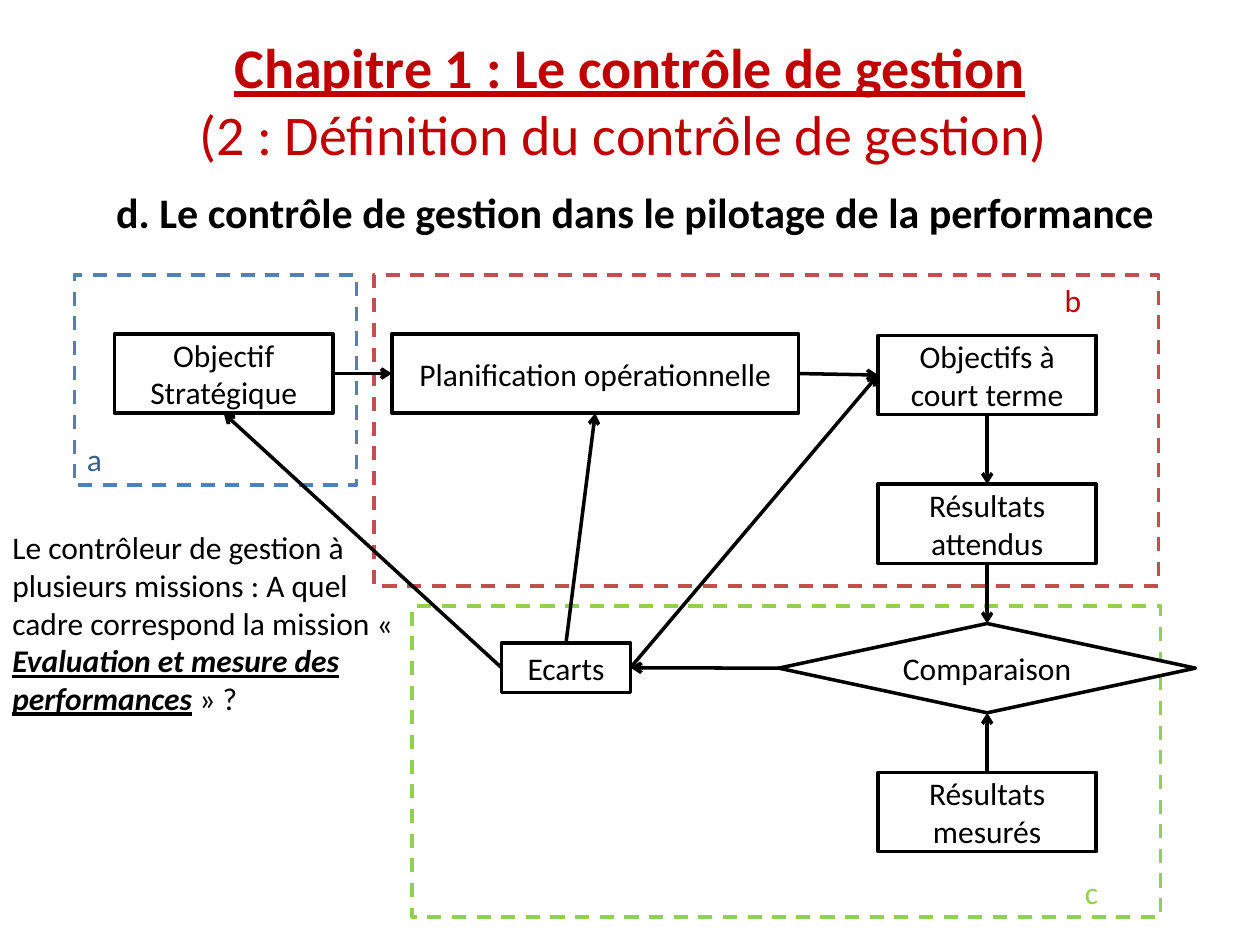
import pptx
import pptx.util
import pptx.dml.color
import pptx.enum.dml
import pptx.enum.shapes
import pptx.enum.text
import pptx.oxml
import pptx.oxml.ns

Cm, Pt = pptx.util.Cm, pptx.util.Pt
RGBColor = pptx.dml.color.RGBColor
SHAPE = pptx.enum.shapes.MSO_SHAPE
ALIGN = pptx.enum.text.PP_ALIGN
ANCHOR = pptx.enum.text.MSO_ANCHOR

BLACK = RGBColor(0x00, 0x00, 0x00)
WHITE = RGBColor(0xFF, 0xFF, 0xFF)
DARK_RED = RGBColor(0xC0, 0x00, 0x00)
FRAME_RED = RGBColor(0xC0, 0x50, 0x4D)
FRAME_BLUE = RGBColor(0x4F, 0x81, 0xBD)
DARK_BLUE = RGBColor(0x37, 0x60, 0x92)
GREEN = RGBColor(0x92, 0xD0, 0x50)

TOP, LEFT, BOTTOM, RIGHT = range(4)  # connection sites

prs = pptx.Presentation()
prs.slide_width, prs.slide_height = Cm(25.4), Cm(19.05)
slide = prs.slides.add_slide(prs.slide_layouts[6])


def add_box(kind, place, line_color):
    """Add a white preset shape; place is left, top, width, height in cm."""
    box = slide.shapes.add_shape(kind, *map(Cm, place))
    box.shadow.inherit = False
    box.fill.solid()
    box.fill.fore_color.rgb = WHITE
    if line_color is None:
        box.line.fill.background()
    else:
        box.line.color.rgb = line_color
        box.line.width = Pt(2)
    return box


def write(shape, paragraphs, size, color, align, anchor=ANCHOR.TOP):
    """Fill a shape; each paragraph is a list of (text, styles), styles from "biu"."""
    frame = shape.text_frame
    frame.word_wrap = True
    frame.vertical_anchor = anchor
    for index, pieces in enumerate(paragraphs):
        paragraph = frame.add_paragraph() if index else frame.paragraphs[0]
        paragraph.alignment = align
        for text, styles in pieces:
            run = paragraph.add_run()
            run.text = text
            run.font.name = "Calibri"
            run.font.size = Pt(size)
            run.font.color.rgb = color
            run.font.bold = "b" in styles
            run.font.italic = "i" in styles
            run.font.underline = "u" in styles


# Dashed frames
for place, color in [
    ((8.31, 12.22, 15.09, 6.27), GREEN),
    ((7.54, 5.54, 15.82, 6.27), FRAME_RED),
    ((1.5, 5.54, 5.69, 4.24), FRAME_BLUE),
]:
    frame_box = add_box(SHAPE.RECTANGLE, place, color)
    frame_box.line.dash_style = pptx.enum.dml.MSO_LINE.DASH

# Steps of the control loop
steps = {}
for label, kind, place in [
    ("Objectif Stratégique", SHAPE.RECTANGLE, (2.31, 6.73, 4.4, 1.6)),
    ("Planification opérationnelle", SHAPE.RECTANGLE, (7.9, 6.73, 8.2, 1.6)),
    ("Objectifs à court terme", SHAPE.RECTANGLE, (17.7, 6.76, 4.4, 1.6)),
    ("Résultats attendus", SHAPE.RECTANGLE, (17.7, 9.76, 4.4, 1.6)),
    ("Comparaison", SHAPE.FLOWCHART_DECISION, (15.7, 12.57, 8.4, 1.8)),
    ("Résultats mesurés", SHAPE.RECTANGLE, (17.7, 15.57, 4.4, 1.6)),
    ("Ecarts", SHAPE.RECTANGLE, (10.11, 12.96, 2.6, 1)),
]:
    steps[label] = add_box(kind, place, BLACK)
    write(steps[label], [[(label, "")]], 18, BLACK, ALIGN.CENTER, ANCHOR.MIDDLE)

# Arrows between the steps
for start, start_site, end, end_site in [
    ("Objectif Stratégique", RIGHT, "Planification opérationnelle", LEFT),
    ("Planification opérationnelle", RIGHT, "Objectifs à court terme", LEFT),
    ("Objectifs à court terme", BOTTOM, "Résultats attendus", TOP),
    ("Résultats attendus", BOTTOM, "Comparaison", TOP),
    ("Résultats mesurés", TOP, "Comparaison", BOTTOM),
    ("Comparaison", LEFT, "Ecarts", RIGHT),
    ("Ecarts", LEFT, "Objectif Stratégique", BOTTOM),
    ("Ecarts", TOP, "Planification opérationnelle", BOTTOM),
    ("Ecarts", RIGHT, "Objectifs à court terme", LEFT),
]:
    arrow = slide.shapes.add_connector(
        pptx.enum.shapes.MSO_CONNECTOR.STRAIGHT, 0, 0, 0, 0)
    arrow.begin_connect(steps[start], start_site)
    arrow.end_connect(steps[end], end_site)
    arrow.line.color.rgb = BLACK
    arrow.line.width = Pt(2)
    head = pptx.oxml.parse_xml(
        '<a:tailEnd %s type="arrow"/>' % pptx.oxml.ns.nsdecls("a"))
    arrow.line._get_or_add_ln().append(head)
    arrow._element.spPr.append(
        pptx.oxml.parse_xml("<a:effectLst %s/>" % pptx.oxml.ns.nsdecls("a")))

# Headings
title = add_box(SHAPE.RECTANGLE, (1.27, 0.53, 22.86, 3.18), None)
write(title, [
    [("Chapitre 1 : Le contrôle de gestion", "bu")],
    [("(2 : Définition du contrôle de gestion) ", "")],
], 32, DARK_RED, ALIGN.CENTER)

subtitle = add_box(SHAPE.RECTANGLE, (1.5, 3.63, 22.8, 1.27), None)
write(subtitle, [
    [("d. Le contrôle de gestion dans le pilotage de la performance ", "b")],
], 24, BLACK, ALIGN.CENTER)

# Frame letters and question
question = [
    ("Le contrôleur de gestion à plusieurs missions : "
     "A quel cadre correspond la mission « ", ""),
    ("Evaluation et mesure des performances", "biu"),
    (" » ?", ""),
]
for pieces, place, color in [
    ([("b", "")], (21.21, 5.54, 1.8, 1.02), DARK_RED),
    ([("a", "")], (1.5, 8.74, 1.8, 1.02), DARK_BLUE),
    ([("c", "")], (21.62, 17.48, 1.8, 1.02), GREEN),
    (question, (0, 10.52, 8.31, 4.11), BLACK),
]:
    note = slide.shapes.add_textbox(*map(Cm, place))
    write(note, [pieces], 18, color, ALIGN.LEFT)

prs.save("out.pptx")
